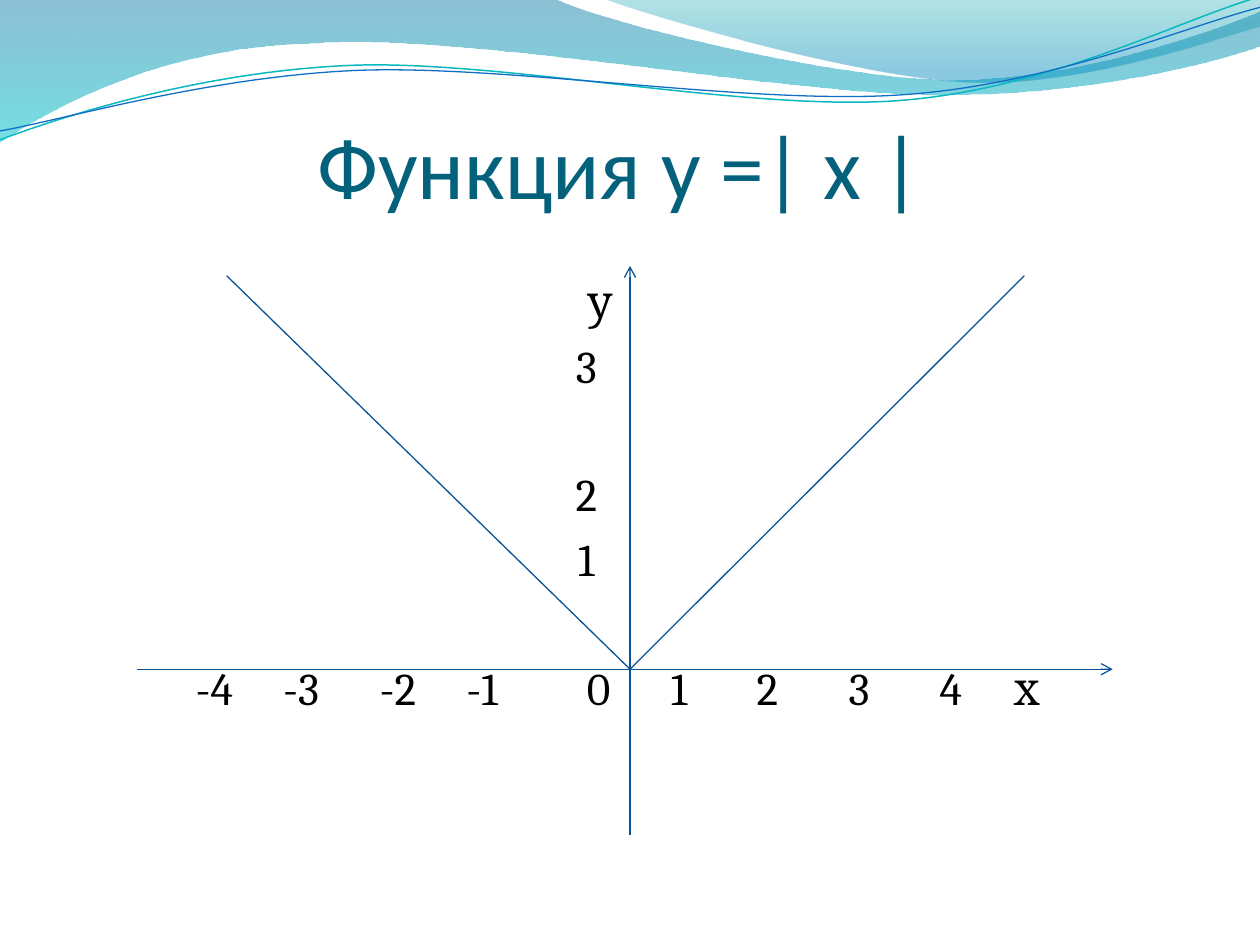
from dataclasses import dataclass

from lxml import etree
from pptx import Presentation
from pptx.dml.color import RGBColor
from pptx.enum.shapes import MSO_CONNECTOR as Connector
from pptx.enum.text import MSO_ANCHOR as Anchor, MSO_AUTO_SIZE as AutoSize, PP_ALIGN as Align
from pptx.oxml import parse_xml
from pptx.oxml.ns import nsdecls, qn
from pptx.util import Cm, Pt


@dataclass(frozen=True)
class Theme:
    title_font: str = "Calibri"
    label_font: str = "Cambria"
    title_size: float = 50
    label_size: float = 26
    line_width: float = 0.75
    title: str = "04617B"
    label: str = "000000"
    graph: str = "095295"
    teal_line: str = "0AB8BF"
    blue_line: str = "0F6FC6"
    # Gradient stops: position %, colour, opacity %
    wide_wave: tuple = ((0, "0074A1", 45), (100, "00C6CF", 55))
    right_wave: tuple = ((0, "00A1A9", 30), (80, "008BBF", 45))


THEME = Theme()

# Each outline is a start point, then segments: one point for a straight line,
# three points for a Bézier curve. All in centimetres.
WIDE_WAVE = ((0, 0), [
    [(11.18, -0.03)],
    [(12.09, 0.43), (16.87, 1.6), (19.25, 1.6)],
    [(21.67, 1.6), (24.33, 0.66), (25.4, 0.23)],
    [(25.43, 0.91)],
    [(24.97, 1.12), (22.1, 1.93), (18.95, 1.91)],
    [(15.8, 1.91), (9.7, 0.71), (6.53, 0.86)],
    [(3.28, 0.91), (1.17, 2.11), (-0.03, 2.87)],
])
RIGHT_WAVE = ((12.17, -0.03), [
    [(12.93, 0.28), (17.32, 1.57), (19.53, 1.65)],
    [(21.74, 1.75), (24.41, 0.81), (25.4, 0.53)],
    [(25.4, 0)],
])
TEAL_CURVE = ((0, 2.82), [
    [(1.22, 2.36), (4.01, 1.45), (7.04, 1.32)],
    [(10.03, 1.19), (15.06, 2.26), (18.11, 2.03)],
    [(21.16, 1.8), (23.83, 0.38), (25.35, -0.05)],
])
BLUE_CURVE = ((0, 2.64), [
    [(1.19, 2.44), (4.17, 1.55), (7.19, 1.42)],
    [(10.24, 1.3), (15.16, 2.13), (18.21, 1.91)],
    [(21.23, 1.7), (23.9, 0.53), (25.4, 0.15)],
])

ORIGIN = (12.7, 13.49)
BRANCH_TOP = 5.56
TEXT_LEFT = 1.52
GAP, WIDE_GAP = 5.9, 42.3
# Rows of axis labels: space before in points, then each label and its centre
LABEL_ROWS = [
    (0, {"у": 12.09}),
    (GAP, {"3": 11.82}),
    (WIDE_GAP, {"2": 11.82}),
    (GAP, {"1": 11.82}),
    (WIDE_GAP, {"-4": 4.32, "-3": 6.07, "-2": 8.02, "-1": 9.72, "0": 12.07,
                "1": 13.69, "2": 15.47, "3": 17.32, "4": 19.17, "х": 20.7}),
]


def add_outline(slide, outline, closed):
    start, segments = outline
    builder = slide.shapes.build_freeform(Cm(start[0]), Cm(start[1]))
    builder.add_line_segments(
        [(Cm(x), Cm(y)) for segment in segments for x, y in segment], close=closed)
    shape = builder.convert_to_shape()
    shape.shadow.inherit = False
    bend_curves(shape, segments)
    return shape


def bend_curves(shape, segments):
    """Turn each run of three straight steps into one Bézier curve."""
    steps = iter(list(shape._element.iter(qn("a:lnTo"))))
    for segment in segments:
        parts = [next(steps) for _ in segment]
        if len(parts) == 3:
            curve = parts[0]
            curve.tag = qn("a:cubicBezTo")
            for part in parts[1:]:
                curve.append(part[0])
                part.getparent().remove(part)


def add_wave(slide, outline, stops):
    """Add a closed outline with a translucent top-to-bottom gradient."""
    shape = add_outline(slide, outline, closed=True)
    shape.line.fill.background()
    stop_xml = "".join(
        f'<a:gs pos="{position * 1000}"><a:srgbClr val="{color}">'
        f'<a:alpha val="{opacity * 1000}"/></a:srgbClr></a:gs>'
        for position, color, opacity in stops)
    gradient = parse_xml(
        f'<a:gradFill {nsdecls("a")} rotWithShape="1"><a:gsLst>{stop_xml}</a:gsLst>'
        '<a:lin ang="5400000" scaled="0"/></a:gradFill>')
    shape._element.spPr.find(qn("a:custGeom")).addnext(gradient)


def format_line(line, color, width=THEME.line_width):
    line.color.rgb = RGBColor.from_string(color)
    line.width = Pt(width)


def add_curve(slide, outline, color, width=THEME.line_width):
    shape = add_outline(slide, outline, closed=False)
    shape.fill.background()
    format_line(shape.line, color, width)


def add_graph_line(slide, begin, end, arrow=False):
    connector = slide.shapes.add_connector(
        Connector.STRAIGHT, *(Cm(value) for value in (*begin, *end)))
    format_line(connector.line, THEME.graph)
    if arrow:
        etree.SubElement(connector.line._get_or_add_ln(), qn("a:tailEnd"), type="arrow")
    etree.SubElement(connector._element.spPr, qn("a:effectLst"))


def format_text(paragraph, font, size, color):
    paragraph.font.name = font
    paragraph.font.size = Pt(size)
    paragraph.font.color.rgb = RGBColor.from_string(color)


def set_title(slide, text):
    title = slide.shapes.title
    title.left, title.top, title.width, title.height = Cm(1.27), Cm(1.19), Cm(22.86), Cm(3.18)
    frame = title.text_frame
    frame.text = text
    frame.auto_size = AutoSize.NONE
    frame.vertical_anchor = Anchor.BOTTOM
    frame.margin_left = frame.margin_right = frame.margin_bottom = 0
    frame.margin_top = Cm(0.13)
    frame.paragraphs[0].alignment = Align.CENTER
    format_text(frame.paragraphs[0], THEME.title_font, THEME.title_size, THEME.title)


def add_axis_labels(slide):
    """Add one text box whose labels stand on centred tab stops."""
    box = slide.shapes.add_textbox(Cm(1.27), Cm(5.38), Cm(22.86), Cm(12.19))
    frame = box.text_frame
    frame.word_wrap = True
    for index, (space, labels) in enumerate(LABEL_ROWS):
        paragraph = frame.paragraphs[0] if index == 0 else frame.add_paragraph()
        paragraph.text = "".join(f"\t{label}" for label in labels)
        paragraph.alignment = Align.LEFT
        paragraph.space_before = Pt(space)
        tabs = etree.SubElement(paragraph._p.get_or_add_pPr(), qn("a:tabLst"))
        for center in labels.values():
            etree.SubElement(tabs, qn("a:tab"), pos=str(Cm(center - TEXT_LEFT)), algn="ctr")
        format_text(paragraph, THEME.label_font, THEME.label_size, THEME.label)


def main():
    presentation = Presentation()
    presentation.slide_width, presentation.slide_height = Cm(25.4), Cm(19.05)
    slide = presentation.slides.add_slide(presentation.slide_layouts[5])

    add_wave(slide, WIDE_WAVE, THEME.wide_wave)
    add_wave(slide, RIGHT_WAVE, THEME.right_wave)
    add_curve(slide, TEAL_CURVE, THEME.teal_line, 0.85)
    add_curve(slide, BLUE_CURVE, THEME.blue_line)
    set_title(slide, "Функция y =| х | ")
    add_axis_labels(slide)

    origin_x, origin_y = ORIGIN
    add_graph_line(slide, (2.77, origin_y), (22.43, origin_y), arrow=True)
    add_graph_line(slide, (origin_x, 16.84), (origin_x, 5.36), arrow=True)
    add_graph_line(slide, (4.57, BRANCH_TOP), ORIGIN)
    add_graph_line(slide, ORIGIN, (20.65, BRANCH_TOP))

    presentation.save("out.pptx")


if __name__ == "__main__":
    main()
